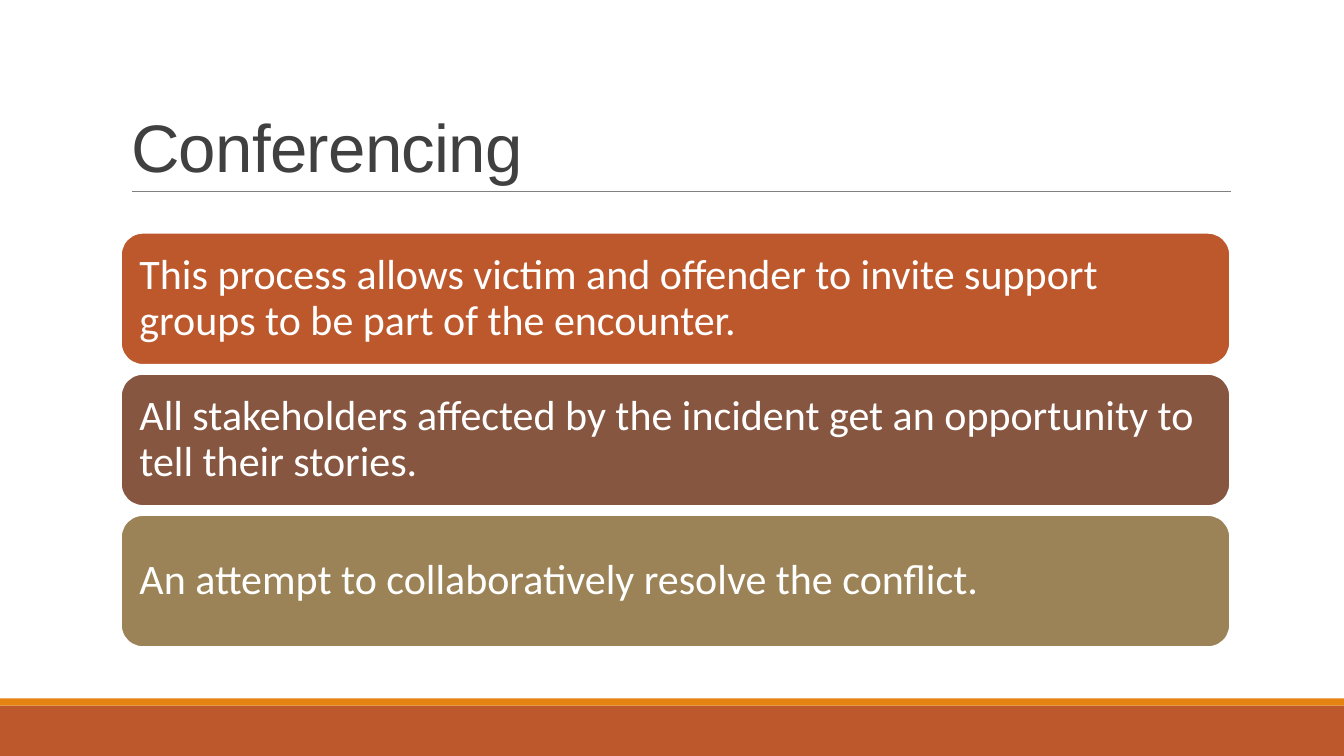
from pptx import Presentation
from pptx.dml.color import RGBColor
from pptx.enum.shapes import MSO_CONNECTOR, MSO_SHAPE
from pptx.enum.text import MSO_ANCHOR, MSO_AUTO_SIZE, PP_ALIGN
from pptx.oxml.ns import qn
from pptx.util import Inches, Pt

LINE = MSO_CONNECTOR.STRAIGHT
RECT = MSO_SHAPE.RECTANGLE
ROUND = MSO_SHAPE.ROUNDED_RECTANGLE
BOTTOM = MSO_ANCHOR.BOTTOM
MIDDLE = MSO_ANCHOR.MIDDLE
FIXED = MSO_AUTO_SIZE.NONE
LEFT = PP_ALIGN.LEFT

WIDTH, HEIGHT = 13.33, 7.5
RUST, AMBER, BROWN, OLIVE = "BD582C", "E48312", "865640", "9B8357"
WHITE, GREY, DARK = "FFFFFF", "808080", "404040"

POINTS = [
    ("This process allows victim and offender to invite support groups "
     "to be part of the encounter.", RUST),
    ("All stakeholders affected by the incident get an opportunity to "
     "tell their stories.", BROWN),
    ("An attempt to collaboratively resolve the conflict.", OLIVE),
]


def color(code):
    return RGBColor.from_string(code)


def write(shape, text, size, font, ink, anchor, leading, inset=None, track=None):
    frame = shape.text_frame
    frame.word_wrap = True
    frame.auto_size = FIXED
    frame.vertical_anchor = anchor
    if inset is not None:
        frame.margin_left = frame.margin_right = Inches(inset)
        frame.margin_top = frame.margin_bottom = Inches(inset)
    para = frame.paragraphs[0]
    para.alignment = LEFT
    para.line_spacing = leading
    run = para.add_run()
    run.text = text
    run.font.size = Pt(size)
    run.font.name = font
    run.font.color.rgb = color(ink)
    if track is not None:
        run.font._element.set("spc", str(round(track * 100)))


def block(slide, kind, box, fill, edge=None):
    shape = slide.shapes.add_shape(kind, *map(Inches, box))
    shape.shadow.inherit = False
    shape.fill.solid()
    shape.fill.fore_color.rgb = color(fill)
    if edge:
        shape.line.color.rgb = color(edge)
        shape.line.width = Pt(1.25)
    else:
        shape.line.fill.background()
    return shape


def footer(slide, left, top, width, height):
    strip = 0.07
    block(slide, RECT, (left, top + strip, width, height - strip), RUST)
    block(slide, RECT, (left, top, width, strip), AMBER)


def header(slide, left, top, width, height):
    title = slide.shapes.title
    title.left, title.top = Inches(left), Inches(top)
    title.width, title.height = Inches(width), Inches(height)
    write(title, "Conferencing", size=48, font="Arial", ink=DARK,
          anchor=BOTTOM, leading=0.85, track=-0.5)
    start, base = left + 0.11, top + height
    rule = slide.shapes.add_connector(
        LINE, Inches(start), Inches(base), Inches(start + 10.9), Inches(base))
    rule.line.color.rgb = color(GREY)
    rule.line.width = Pt(0.5)
    props = rule._element.spPr
    props.append(props.makeelement(qn("a:effectLst"), {}))


def cards(slide, left, top, width, height, gap=0.09):
    count = len(POINTS)
    tall = (height - gap * (count - 1)) / count
    for index, (text, fill) in enumerate(POINTS):
        box = (left, top + index * (tall + gap), width, tall)
        card = block(slide, ROUND, box, fill, edge=WHITE)
        write(card, text, size=30, font="Calibri", ink=WHITE,
              anchor=MIDDLE, leading=0.9, inset=0.12)


def main():
    deck = Presentation()
    deck.slide_width, deck.slide_height = Inches(WIDTH), Inches(HEIGHT)
    slide = deck.slides.add_slide(deck.slide_layouts[5])
    footer(slide, 0, 6.93, WIDTH, 0.57)
    header(slide, 1.2, 0.31, 11, 1.59)
    cards(slide, 1.2, 2.31, 11, 4.11)
    deck.save("out.pptx")


if __name__ == "__main__":
    main()
